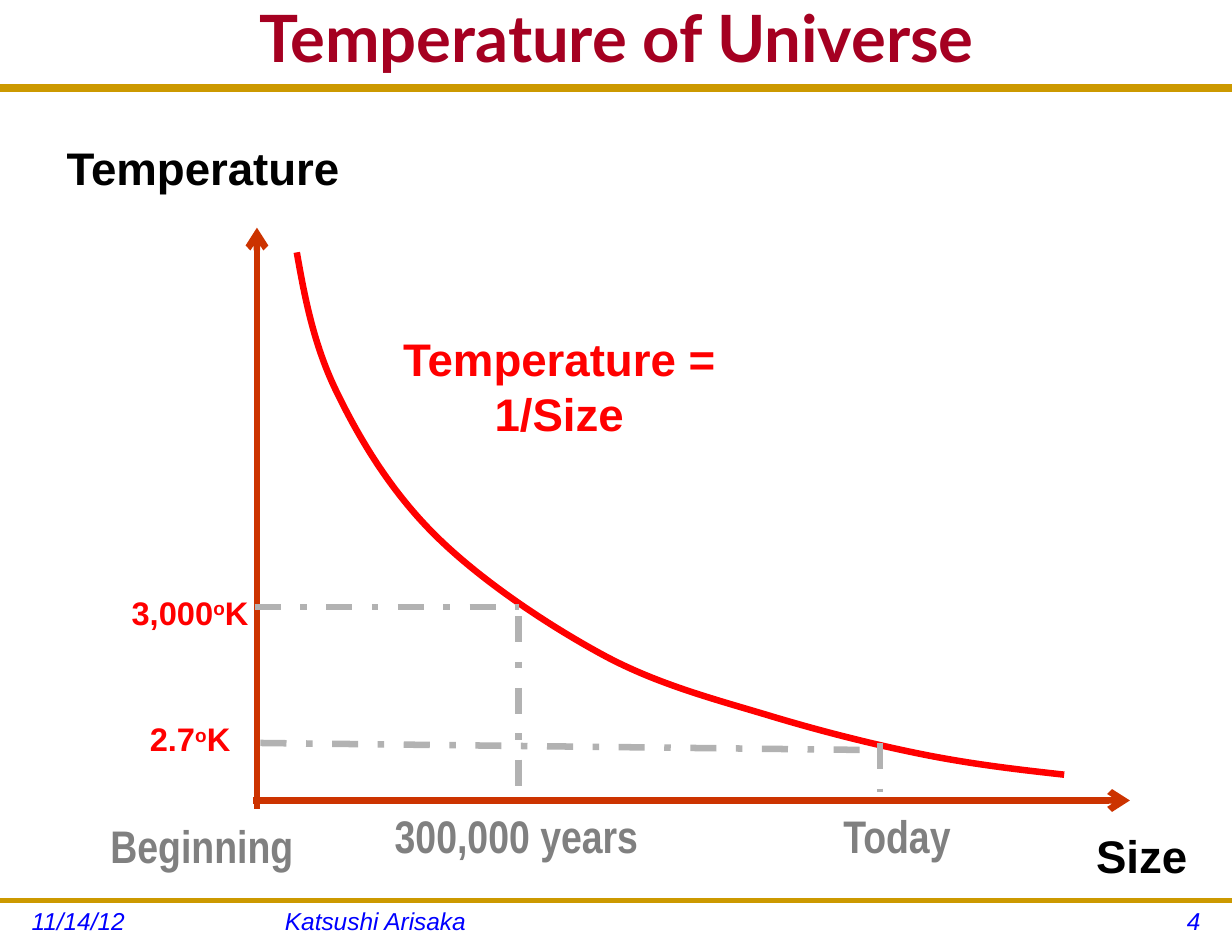
from lxml import etree
from pptx import Presentation, util as u
from pptx.dml.color import RGBColor
from pptx.enum import dml, shapes, text
from pptx.oxml.ns import qn

COLS, ROWS = 10.5, 8
CELL = u.Inches(1)
COLORS = {"gold": "CC9900", "title": "A50021", "footer": "0000FF", "axis": "CC3300",
          "curve": "FF0000", "guide": "B2B2B2", "mark": "808080", "ink": "000000"}
ORIGIN_X, ORIGIN_Y = 2.19, 6.82
CURVE = [(2.53, 2.15), (2.6, 2.55), (2.68, 2.96), (2.88, 3.36),
         (3.08, 3.77), (3.35, 4.21), (3.73, 4.58),
         (4.11, 4.95), (4.66, 5.32), (5.14, 5.58),
         (5.62, 5.84), (6.14, 5.97), (6.6, 6.11),
         (7.07, 6.25), (7.52, 6.36), (7.93, 6.44),
         (8.35, 6.52), (8.71, 6.56), (9.07, 6.6)]


def grid(*cells):
    return [u.Emu(round(c * CELL)) for c in cells]


def rgb(name):
    return RGBColor.from_string(COLORS[name])


def write(sp, parts, size=28, color="ink", font="Arial", bold=True, italic=False,
          align="CENTER", anchor="TOP", wrap=False, spacing=None):
    tf = sp.text_frame
    tf.word_wrap = wrap
    tf.auto_size = text.MSO_AUTO_SIZE.NONE
    tf.vertical_anchor = text.MSO_ANCHOR[anchor]
    p = tf.paragraphs[0]
    p.alignment = text.PP_ALIGN[align]
    p.line_spacing = spacing
    for i, part in enumerate(parts):
        r = p.add_run()
        r.text = part
        r.font.size, r.font.name = u.Pt(size), font
        r.font.bold, r.font.italic = bold, italic
        r.font.color.rgb = rgb(color)
        if i % 2:
            r._r.get_or_add_rPr().set("baseline", "30000")


def label(s, box, *parts, **fmt):
    write(s.shapes.add_textbox(*grid(*box)), parts, **fmt)


def line(s, start, end, color, width=4, dashed=False, arrow=False):
    sp = s.shapes.add_connector(shapes.MSO_CONNECTOR.STRAIGHT, *grid(*start, *end))
    sp.line.color.rgb = rgb(color)
    sp.line.width = u.Pt(width)
    if dashed:
        sp.line.dash_style = dml.MSO_LINE.DASH_DOT
    if arrow:
        etree.SubElement(sp.line._get_or_add_ln(), qn("a:tailEnd"), type="arrow")
    etree.SubElement(sp._element.spPr, qn("a:effectLst"))


def curve(s, points, color, width=4):
    fb = s.shapes.build_freeform(*grid(*points[0]))
    fb.add_line_segments([grid(*pt) for pt in points[1:]], close=False)
    sp = fb.convert_to_shape()
    sp.shadow.inherit = False
    sp.fill.background()
    sp.line.color.rgb = rgb(color)
    sp.line.width = u.Pt(width)
    path = next(sp._element.iter(qn("a:path")))
    steps = path.findall(qn("a:lnTo"))
    for i in range(0, len(steps), 3):
        bez = etree.SubElement(path, qn("a:cubicBezTo"))
        for step in steps[i:i + 3]:
            bez.append(step[0])
            path.remove(step)


def frame(s):
    for y, width in ((0.75, 4.5), (7.67, 3)):
        line(s, (0, y), (COLS, y), "gold", width)
    for x, w, words, align in ((0.17, 2.08, "11/14/12", "LEFT"),
                               (2.33, 6.08, "Katsushi Arisaka", "LEFT"),
                               (8.5, 1.83, "4", "RIGHT")):
        label(s, (x, 7.67, w, 0.33), words, size=15, color="footer",
              bold=False, italic=True, align=align, wrap=True)
    title = s.shapes.title
    title.left, title.top, title.width, title.height = grid(0.17, 0, COLS - 0.33, 0.75)
    write(title, ["Temperature of Universe"], size=40, color="title", font="Lato",
          anchor="MIDDLE", wrap=True, spacing=0.8)


def main():
    prs = Presentation()
    prs.slide_width, prs.slide_height = grid(COLS, ROWS)
    s = prs.slides.add_slide(prs.slide_layouts[5])
    frame(s)

    line(s, (2.16, ORIGIN_Y), (9.63, ORIGIN_Y), "axis", arrow=True)
    line(s, (ORIGIN_X, 6.89), (ORIGIN_X, 1.94), "axis", arrow=True)
    label(s, (9.24, 7, 0.98, 0.57), "Size")
    label(s, (0.45, 1.14, 2.56, 0.57), "Temperature")
    for x, y, w, words in ((7.08, 6.83, 1.13, "Today"), (0.83, 6.92, 1.78, "Beginning"),
                           (3.25, 6.83, 2.3, "300,000 years")):
        label(s, (x, y, w, 0.57), words, color="mark", font="Arial Narrow")

    curve(s, CURVE, "curve")
    label(s, (2.99, 2.77, 3.55, 1), "Temperature = 1/Size", color="curve", wrap=True)
    for x, y, w, degrees in ((1.17, 6.08, 0.9, "2.7"), (1.01, 5, 1.22, "3,000")):
        label(s, (x, y, w, 0.44), degrees, "o", "K", size=20, color="curve")
    for start, end in (((2.22, 6.33), (7.4, 6.39)), ((4.42, 5.25), (4.42, 6.75)),
                       ((2.17, 5.17), (4.42, 5.17)), ((7.5, 6.33), (7.5, 6.75))):
        line(s, start, end, "guide", dashed=True)

    prs.save("out.pptx")


if __name__ == "__main__":
    main()
